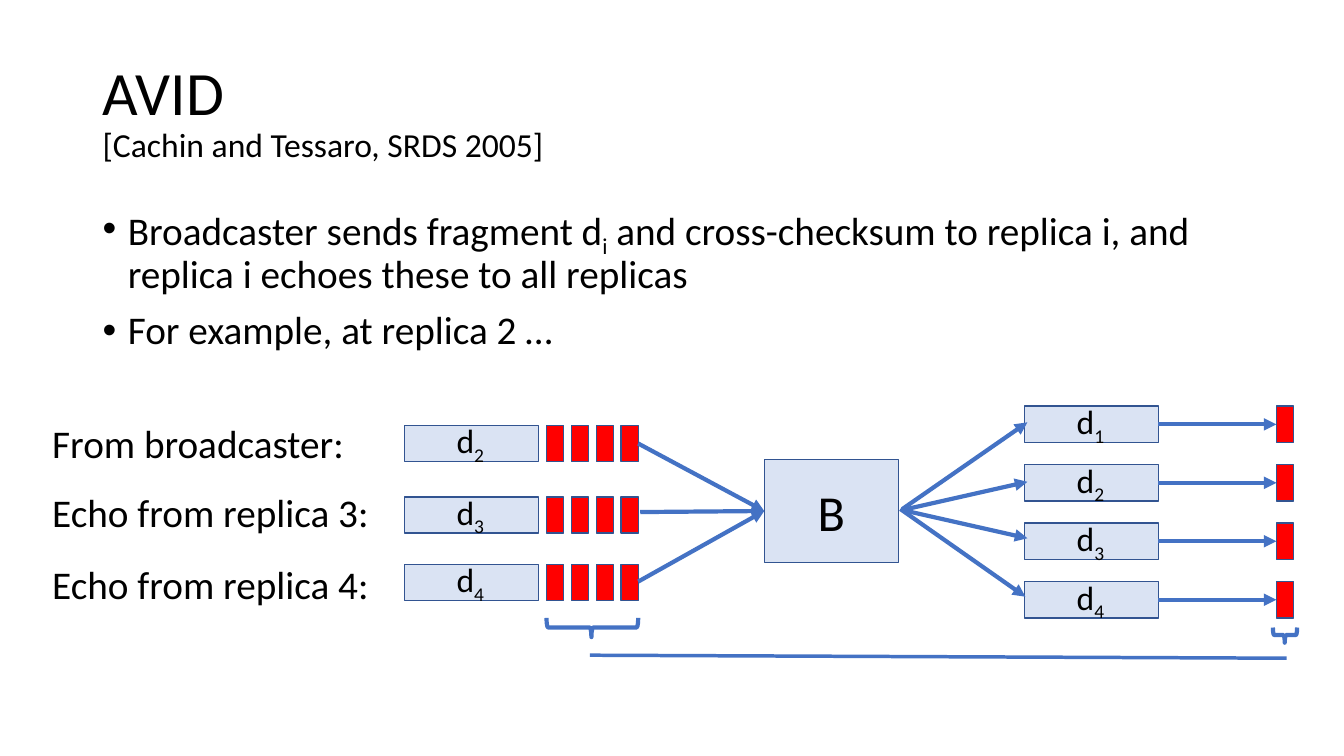
from lxml import etree
from pptx import Presentation
from pptx.dml.color import RGBColor
from pptx.enum.shapes import MSO_CONNECTOR, MSO_SHAPE
from pptx.enum.text import MSO_ANCHOR, MSO_AUTO_SIZE, PP_ALIGN
from pptx.oxml.ns import qn
from pptx.util import Inches, Pt

# Content: text pairs are (text, is subscript)
TITLE, CITATION = "AVID", "[Cachin and Tessaro, SRDS 2005]"
BULLETS = [
    [("Broadcaster sends fragment d", False), ("i", True),
     (" and cross-checksum to replica i, and replica i echoes these to all replicas", False)],
    [("For example, at replica 2 …", False)],
]
RECEIVED = [  # label, label top, fragment index, row top, arrow start
    ("From broadcaster:", 4.11, "2", 4.22, (6.33, 4.4)),
    ("Echo from replica 3:", 4.8, "3", 4.93, (6.35, 5.08)),
    ("Echo from replica 4:", 5.51, "4", 5.6, (6.33, 5.77)),
]
DECODED = [  # fragment index, arrow start, arrow end
    ("1", (8.95, 5.05), (10.19, 4.19)),
    ("2", (8.95, 5.06), (10.19, 4.78)),
    ("3", (8.95, 5.06), (10.19, 5.34)),
    ("4", (8.93, 5.05), (10.17, 5.92)),
]
BRACES = [(5.78, 5.77, 0.19, 0.91), (12.67, 6.18, 0.15, 0.24)]

# Style and geometry
FONT = "Calibri"
BLACK = RGBColor(0x00, 0x00, 0x00)
PALE = RGBColor(0xDA, 0xE3, 0xF3)
RED = RGBColor(0xFF, 0x00, 0x00)
OUTLINE = RGBColor(0x32, 0x54, 0x91)
BLUE = RGBColor(0x44, 0x72, 0xC4)
FRAGMENT_W, HASH_W, ROW_H = 1.33, 0.17, 0.36
RECEIVED_X, DECODED_X = 4.01, 10.16
HASHES_X, HASH_STEP, HASH_COUNT = 5.42, 0.247, 4
DECODED_Y, DECODED_STEP = 4.03, 0.58
CHECK_X = 12.66
BLOCK_INPUT = (7.58, 5.07)

presentation = Presentation()
presentation.slide_width, presentation.slide_height = Inches(13.33), Inches(7.5)
slide = presentation.slides.add_slide(presentation.slide_layouts[6])


def set_font(paragraph, size):
    paragraph.font.name, paragraph.font.size = FONT, Pt(size)
    paragraph.font.color.rgb = BLACK


def add_runs(paragraph, pieces):
    for text, subscript in pieces:
        run = paragraph.add_run()
        run.text = text
        if subscript:
            run.font._element.set("baseline", "-25000")


def add_text(left, top, width, height, wrap=True):
    frame = slide.shapes.add_textbox(*map(Inches, (left, top, width, height))).text_frame
    frame.word_wrap = wrap
    frame.auto_size = MSO_AUTO_SIZE.NONE if wrap else MSO_AUTO_SIZE.SHAPE_TO_FIT_TEXT
    return frame


def add_label(left, top, width, height, size, pieces):
    paragraph = add_text(left, top, width, height, wrap=False).paragraphs[0]
    set_font(paragraph, size)
    add_runs(paragraph, pieces)


def add_box(left, top, width, height, color):
    shape = slide.shapes.add_shape(MSO_SHAPE.RECTANGLE, *map(Inches, (left, top, width, height)))
    shape.shadow.inherit = False
    shape.fill.solid()
    shape.fill.fore_color.rgb = color
    shape.line.color.rgb, shape.line.width = OUTLINE, Pt(1)
    return shape


def add_fragment(left, top, index):
    add_box(left, top, FRAGMENT_W, ROW_H, PALE)
    add_label(left + 0.42, top - 0.1, 0.49, 0.5, 24, [("d", False), (index, True)])


def add_line(start, end, width=3, arrow=True):
    line = slide.shapes.add_connector(MSO_CONNECTOR.STRAIGHT, *map(Inches, start + end))
    line.line.color.rgb, line.line.width = BLUE, Pt(width)
    if arrow:
        etree.SubElement(line.line._get_or_add_ln(), qn("a:tailEnd"), type="triangle")
    etree.SubElement(line._element.spPr, qn("a:effectLst"))


# Title with citation
title = add_text(0.92, 0.4, 11.5, 1.45)
title.vertical_anchor = MSO_ANCHOR.MIDDLE
heading = title.paragraphs[0]
heading.line_spacing = 0.9
set_font(heading, 44)
add_runs(heading, [(TITLE, False)])
heading.add_line_break()
add_runs(heading, [(CITATION, False)])
heading.runs[-1].font.size = Pt(24)

# Bullets
body = add_text(0.92, 2, 11.83, 1.59)
for number, pieces in enumerate(BULLETS):
    paragraph = body.add_paragraph() if number else body.paragraphs[0]
    paragraph.line_spacing, paragraph.space_before = 0.9, Pt(10)
    set_font(paragraph, 28)
    add_runs(paragraph, pieces)
    properties = paragraph._p.get_or_add_pPr()
    properties.set("marL", str(Inches(0.25)))
    properties.set("indent", str(-Inches(0.25)))
    bullet_font = etree.Element(qn("a:buFont"), typeface="Arial")
    bullet = etree.Element(qn("a:buChar"), char="•")
    properties.find(qn("a:defRPr")).addprevious(bullet_font)
    bullet_font.addnext(bullet)

# Block B
block = add_box(7.58, 4.56, 1.33, 1.02, PALE)
block.text_frame.vertical_anchor = MSO_ANCHOR.MIDDLE
block_name = block.text_frame.paragraphs[0]
block_name.alignment = PP_ALIGN.CENTER
set_font(block_name, 36)
add_runs(block_name, [("B", False)])

# Received fragments with their cross-checksums
for label, label_top, index, top, arrow_start in RECEIVED:
    add_label(0.42, label_top, 3.13 if index == "2" else 3.37, 0.57, 28, [(label, False)])
    add_fragment(RECEIVED_X, top, index)
    for column in range(HASH_COUNT):
        add_box(HASHES_X + column * HASH_STEP, top, HASH_W, ROW_H, RED)
    add_line(arrow_start, BLOCK_INPUT)

# Fragments encoded again from B, each with its hash
for row, (index, arrow_start, arrow_end) in enumerate(DECODED):
    top = DECODED_Y + row * DECODED_STEP
    middle = top + ROW_H / 2
    add_fragment(DECODED_X, top, index)
    add_line((DECODED_X + FRAGMENT_W, middle), (CHECK_X, middle))
    add_box(CHECK_X, top, HASH_W, ROW_H, RED)
    add_line(arrow_start, arrow_end)

# Braces joined by the comparison line
for place in BRACES:
    brace = slide.shapes.add_shape(MSO_SHAPE.LEFT_BRACE, *map(Inches, place))
    brace.shadow.inherit = False
    brace.rotation = 270
    brace.adjustments[0], brace.adjustments[1] = 0.083, 0.49
    brace.fill.background()
    brace.line.color.rgb, brace.line.width = BLUE, Pt(3)
add_line((12.76, 6.53), (5.85, 6.5), width=2.5, arrow=False)

presentation.save("out.pptx")
